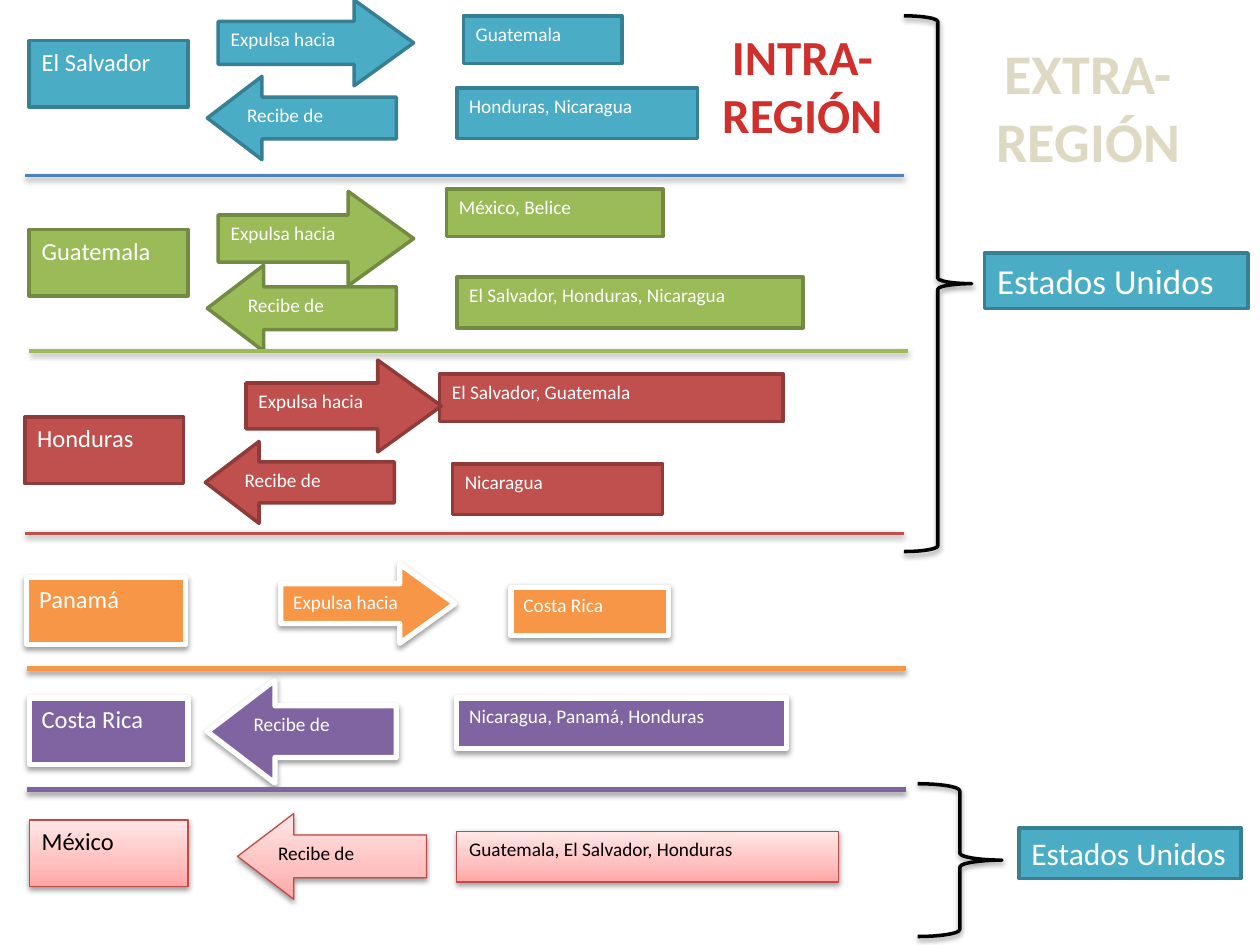
from copy import deepcopy
from dataclasses import dataclass

from lxml import etree
from pptx import Presentation
from pptx.dml.color import RGBColor
from pptx.enum.shapes import MSO_CONNECTOR, MSO_SHAPE
from pptx.enum.text import MSO_ANCHOR, PP_ALIGN
from pptx.oxml import parse_xml
from pptx.util import Cm, Pt

RECT = MSO_SHAPE.RECTANGLE
RIGHT = MSO_SHAPE.RIGHT_ARROW
LEFT = MSO_SHAPE.LEFT_ARROW
BRACE = MSO_SHAPE.RIGHT_BRACE
STRAIGHT = MSO_CONNECTOR.STRAIGHT
TOP = MSO_ANCHOR.TOP
ALIGN_LEFT, ALIGN_CENTER = PP_ALIGN.LEFT, PP_ALIGN.CENTER
DRAWING = "http://schemas.openxmlformats.org/drawingml/2006/main"


@dataclass(frozen=True)
class Style:
    fill: str
    edge: str
    edge_width: float = 2
    text: str = "FFFFFF"
    shadow: bool = False
    stops: tuple = ()


class Theme:
    font = "Calibri"
    country_size, label_size, intra_size, extra_size = 14, 11, 28, 32
    intra, extra, brace = "D02F2C", "DDD9C3", "000000"
    aqua = Style("4BACC6", "377F92")
    green = Style("9BBB59", "738A42")
    red = Style("C0504D", "8E3B39")
    orange = Style("F79646", "FFFFFF", 3, shadow=True)
    purple = Style("8064A2", "FFFFFF", 3, shadow=True)
    pink = Style("", "BF4C48", 0.75, "000000", True,
                 ((0, "FFA6A5"), (0.35, "FFC0BF"), (1, "FFE7E7")))


COUNTRY_SIZE = (3.2, 1.34)
HEAD_RATIO = {RIGHT: 0.694, LEFT: 0.656}
ARROW_TEXT = {RIGHT: "Expulsa hacia", LEFT: "Recibe de"}

# Each flow: arrow kind, arrow place, partner countries, place of their box (cm)
ROWS = [
    ("El Salvador", Theme.aqua, (0.59, 0.82), [
        (RIGHT, (4.4, 0, 3.94, 1.73), "Guatemala", (9.34, 0.32, 3.2, 0.96)),
        (LEFT, (4.18, 1.54, 3.81, 1.68), "Honduras, Nicaragua", (9.21, 1.77, 4.85, 1.02))]),
    ("Guatemala", Theme.green, (0.59, 4.63), [
        (RIGHT, (4.4, 3.86, 3.94, 1.9), "México, Belice", (9, 3.81, 4.37, 0.96)),
        (LEFT, (4.18, 5.35, 3.81, 1.73), "El Salvador, Honduras, Nicaragua",
         (9.21, 5.59, 6.98, 1.02))]),
    ("Honduras", Theme.red, (0.5, 8.41), [
        (RIGHT, (4.96, 7.26, 3.94, 1.85), "El Salvador, Guatemala", (8.86, 7.54, 6.93, 0.96)),
        (LEFT, (4.14, 8.9, 3.81, 1.65), "Nicaragua", (9.12, 9.35, 4.24, 1.02))]),
    ("Panamá", Theme.orange, (0.54, 11.65), [
        (RIGHT, (5.66, 11.37, 3.51, 1.6), "Costa Rica", (10.3, 11.84, 3.18, 0.98))]),
    ("Costa Rica", Theme.purple, (0.59, 14.07), [
        (LEFT, (4.18, 13.71, 3.81, 2.08), "Nicaragua, Panamá, Honduras",
         (9.21, 14.07, 6.65, 1.02))]),
    ("México", Theme.pink, (0.59, 16.53), [
        (LEFT, (4.79, 16.4, 3.81, 1.73), "Guatemala, El Salvador, Honduras",
         (9.21, 16.76, 7.7, 1.02))]),
]

# Dividers: left, top, colour, width
DIVIDERS = [
    (0.5, 3.54, "4F81BD", 2), (0.59, 7.08, "9BBB59", 2), (0.5, 10.75, "C0504D", 2),
    (0.54, 13.48, "F79646", 3), (0.54, 15.92, "8064A2", 3),
]
DIVIDER_LENGTH = 17.72

# Braces with the box each one points at
DESTINATIONS = [
    ((18.22, 0.32, 1.37, 10.8), (19.85, 5.1, 5.31, 1.12), 20),
    ((18.5, 15.8, 1.7, 3.08), (20.54, 16.69, 4.48, 1.02), 18),
]


def set_effects(shape, shadow):
    """Give a shape or line a soft drop shadow, or none at all."""
    properties = shape._element.spPr
    for old in properties.findall(f"{{{DRAWING}}}effectLst"):
        properties.remove(old)
    effects = etree.SubElement(properties, f"{{{DRAWING}}}effectLst")
    if shadow:
        effects.append(parse_xml(
            f'<a:outerShdw xmlns:a="{DRAWING}" blurRad="40000" dist="20000" dir="5400000" '
            'rotWithShape="0"><a:srgbClr val="000000"><a:alpha val="38000"/>'
            '</a:srgbClr></a:outerShdw>'))


def set_line(shape, colour, width):
    shape.line.color.rgb = RGBColor.from_string(colour)
    shape.line.width = Pt(width)


def set_fill(shape, style):
    if not style.stops:
        shape.fill.solid()
        shape.fill.fore_color.rgb = RGBColor.from_string(style.fill)
        return
    shape.fill.gradient()
    shape.fill.gradient_angle = 90
    first = shape.fill.gradient_stops[0]._gs
    first.addnext(deepcopy(first))
    for stop, (position, colour) in zip(shape.fill.gradient_stops, style.stops):
        stop.position = position
        stop.color.rgb = RGBColor.from_string(colour)


def write(shape, lines, size, colour, align=ALIGN_LEFT, bold=False):
    frame = shape.text_frame
    frame.word_wrap = True
    frame.vertical_anchor = TOP
    font_format = {"name": Theme.font, "size": Pt(size), "bold": bold}
    for index, line in enumerate(lines):
        para = frame.add_paragraph() if index else frame.paragraphs[0]
        para.alignment = align
        span = para.add_run()
        span.text = line
        for name, value in font_format.items():
            setattr(span.font, name, value)
        span.font.color.rgb = RGBColor.from_string(colour)


def add_block(page, kind, place, text, style, size=Theme.label_size):
    shape = page.shapes.add_shape(kind, *map(Cm, place))
    if kind in HEAD_RATIO:
        shape.adjustments[1] = HEAD_RATIO[kind]
    set_fill(shape, style)
    set_line(shape, style.edge, style.edge_width)
    set_effects(shape, style.shadow)
    write(shape, [text], size, style.text)


def add_divider(page, left, top, colour, width):
    line = page.shapes.add_connector(
        STRAIGHT, Cm(left), Cm(top), Cm(left + DIVIDER_LENGTH), Cm(top))
    set_line(line, colour, width)
    set_effects(line, True)


def add_brace(page, place):
    brace = page.shapes.add_shape(BRACE, *map(Cm, place))
    brace.fill.background()
    set_line(brace, Theme.brace, 2)
    set_effects(brace, True)


def add_heading(page, place, lines, size, colour):
    box = page.shapes.add_textbox(*map(Cm, place))
    write(box, lines, size, colour, ALIGN_CENTER, True)


def main():
    deck = Presentation()
    deck.slide_width, deck.slide_height = Cm(25.4), Cm(19.05)
    page = deck.slides.add_slide(deck.slide_layouts[6])

    # Migration flows by country
    for country, style, corner, flows in ROWS:
        add_block(page, RECT, corner + COUNTRY_SIZE, country, style, Theme.country_size)
        for arrow, arrow_place, partners, partners_place in flows:
            add_block(page, RECT, partners_place, partners, style)
            add_block(page, arrow, arrow_place, ARROW_TEXT[arrow], style)
    for divider in DIVIDERS:
        add_divider(page, *divider)

    # Region headings
    add_heading(page, (11.68, 0.4, 8.99, 2.64), ["INTRA-", "REGIÓN"],
                Theme.intra_size, Theme.intra)
    add_heading(page, (19.3, 0.66, 5.28, 3), ["EXTRA-", "REGIÓN"],
                Theme.extra_size, Theme.extra)

    # Destinations outside the region
    for brace_place, box_place, size in DESTINATIONS:
        add_brace(page, brace_place)
        add_block(page, RECT, box_place, "Estados Unidos", Theme.aqua, size)

    deck.save("out.pptx")


if __name__ == "__main__":
    main()
